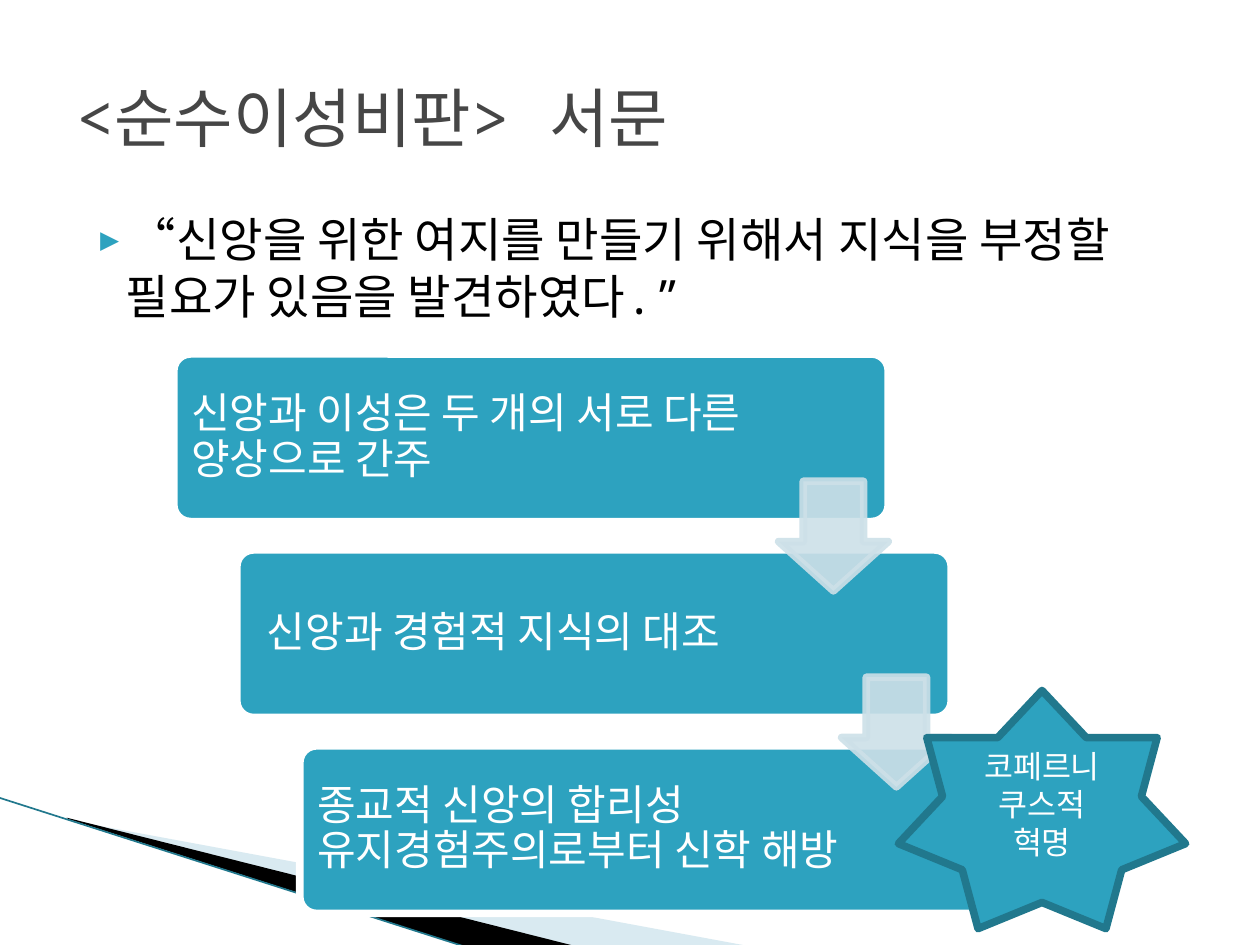
"""Build the slide on the preface of the Critique of Pure Reason."""
from typing import NamedTuple

from lxml import etree
from pptx import Presentation
from pptx import util as u
from pptx.dml.color import RGBColor
from pptx.enum import shapes, text
from pptx.oxml import ns

FONT = "Noto Sans Mono"
TEAL = RGBColor(0x2D, 0xA2, 0xBF)
DARK_TEAL = RGBColor(0x21, 0x78, 0x8D)
PALE = RGBColor(0xCD, 0xE0, 0xE8)
SKY = RGBColor(0xA0, 0xCB, 0xDC)
GREY = RGBColor(0x46, 0x46, 0x46)
BLACK = RGBColor(0, 0, 0)
WHITE = RGBColor(0xFF, 0xFF, 0xFF)
BORDER = 4.33
STEP_X, STEP_Y = 0.5, 1.555


class Step(NamedTuple):
    words: str
    inset: float = 0.1


class Wedge(NamedTuple):
    points: list[tuple[float, float]]
    color: RGBColor
    opacity: int = 100


STEPS = [
    Step("신앙과 이성은 두 개의 서로 다른 양상으로 간주"),
    Step("신앙과 경험적 지식의 대조", 0.2),
    Step("종교적 신앙의 합리성 유지경험주의로부터 신학 해방"),
]
WEDGES = [
    Wedge([(0.55, 6.51), (5.95, 7.51), (4.56, 7.51), (0.55, 6.5)], SKY, 40),
    Wedge([(0.53, 6.49), (4.57, 7.51), (3.72, 7.52), (0.54, 6.5)], BLACK),
]


def add_xml(parent, tag: str, **attrs: str):
    """Append a DrawingML element to a parent."""
    return etree.SubElement(parent, ns.qn(tag), attrs)


def set_opacity(sp, percent: int) -> None:
    """Make every solid colour of a shape partly transparent."""
    for clr in sp._element.spPr.iter(ns.qn("a:srgbClr")):
        add_xml(clr, "a:alpha", val=str(percent * 1000))


def write(sp, words: str, size: float, color: RGBColor,
          align=text.PP_ALIGN.LEFT, **frame):
    """Write one formatted paragraph into a shape and return it."""
    tf = sp.text_frame
    for name, value in {"word_wrap": True, **frame}.items():
        setattr(tf, name, value)
    p = tf.paragraphs[0]
    p.alignment = align
    r = p.add_run()
    r.text = words
    for name, value in {"size": u.Pt(size), "bold": False, "name": FONT}.items():
        setattr(r.font, name, value)
    r.font.color.rgb = color
    return p


def add_preset(s, kind, box: tuple[float, ...], fill: RGBColor, line: RGBColor,
               adj: tuple[float, ...] = ()):
    """Add a filled and outlined preset shape."""
    sp = s.shapes.add_shape(kind, *map(u.Inches, box))
    sp.shadow.inherit = False
    sp.fill.solid()
    sp.fill.fore_color.rgb = fill
    sp.line.color.rgb = line
    sp.line.width = u.Pt(BORDER)
    for i, value in enumerate(adj):
        sp.adjustments[i] = value
    return sp


def add_wedge(s, wedge: Wedge) -> None:
    """Add a borderless wedge of the corner decoration."""
    points = [(u.Inches(x), u.Inches(y)) for x, y in wedge.points]
    builder = s.shapes.build_freeform(*points[0])
    builder.add_line_segments(points[1:])
    sp = builder.convert_to_shape()
    sp.shadow.inherit = False
    sp.fill.solid()
    sp.fill.fore_color.rgb = wedge.color
    sp.line.fill.background()
    if wedge.opacity < 100:
        set_opacity(sp, wedge.opacity)


def add_decoration(s) -> None:
    """Add the wedges and the thin line of the lower left corner."""
    for wedge in WEDGES:
        add_wedge(s, wedge)
    line = s.shapes.add_connector(
        shapes.MSO_CONNECTOR.STRAIGHT, *map(u.Inches, (-0.01, 6.33, 3.71, 7.52)))
    line.line.color.rgb = DARK_TEAL
    line.line.width = u.Pt(0.95)
    add_xml(line._element.spPr, "a:effectLst")


def add_quote(s) -> None:
    """Add the bulleted quotation."""
    sp = s.shapes.add_textbox(*map(u.Inches, (0.5, 1.62, 9, 4.95)))
    p = write(sp, "“신앙을 위한 여지를 만들기 위해서 지식을 부정할 필요가 있음을 발견하였다.”",
              27, BLACK)
    pPr = p._p.get_or_add_pPr()
    pPr.set("marL", str(u.Inches(0.4)))
    pPr.set("indent", str(u.Inches(-0.28)))
    add_xml(add_xml(pPr, "a:buClr"), "a:srgbClr", val=str(TEAL))
    add_xml(pPr, "a:buSzPct", val="68000")
    add_xml(pPr, "a:buFont", typeface=FONT)
    add_xml(pPr, "a:buChar", char="▶")


def add_steps(s) -> None:
    """Add the staircase of boxes and the arrows between them."""
    pad = u.Inches(0.1)
    for i, step in enumerate(STEPS):
        box = (1.38 + i * STEP_X, 2.81 + i * STEP_Y, 5.67, 1.33)
        sp = add_preset(s, shapes.MSO_SHAPE.ROUNDED_RECTANGLE, box, TEAL, WHITE, (0.1,))
        p = write(sp, step.words, 24, WHITE, vertical_anchor=text.MSO_ANCHOR.MIDDLE,
                  margin_left=u.Inches(step.inset), margin_right=pad,
                  margin_top=pad, margin_bottom=pad)
        p.line_spacing = 0.9
    for i in range(len(STEPS) - 1):
        box = (6.18 + i * STEP_X, 3.82 + i * STEP_Y, 0.87, 0.87)
        sp = add_preset(s, shapes.MSO_SHAPE.DOWN_ARROW, box, PALE, PALE, (0.55, 0.45))
        set_opacity(sp, 90)


def main() -> None:
    """Build and save the slide."""
    prs = Presentation()
    prs.slide_width, prs.slide_height = u.Inches(10), u.Inches(7.5)
    s = prs.slides.add_slide(prs.slide_layouts[5])
    add_decoration(s)
    add_quote(s)
    title = s.shapes.title
    title.left, title.top, title.width, title.height = map(u.Inches, (0.5, 0.3, 9, 1.25))
    write(title, "<순수이성비판> 서문", 36.9, GREY,
          vertical_anchor=text.MSO_ANCHOR.MIDDLE)
    add_steps(s)
    star = add_preset(s, shapes.MSO_SHAPE.STAR_7_POINT, (7.13, 5.48, 2.28, 1.89),
                      TEAL, DARK_TEAL)
    write(star, "코페르니쿠스적 혁명", 18, WHITE, align=text.PP_ALIGN.CENTER,
          vertical_anchor=text.MSO_ANCHOR.MIDDLE)
    prs.save("out.pptx")


if __name__ == "__main__":
    main()
